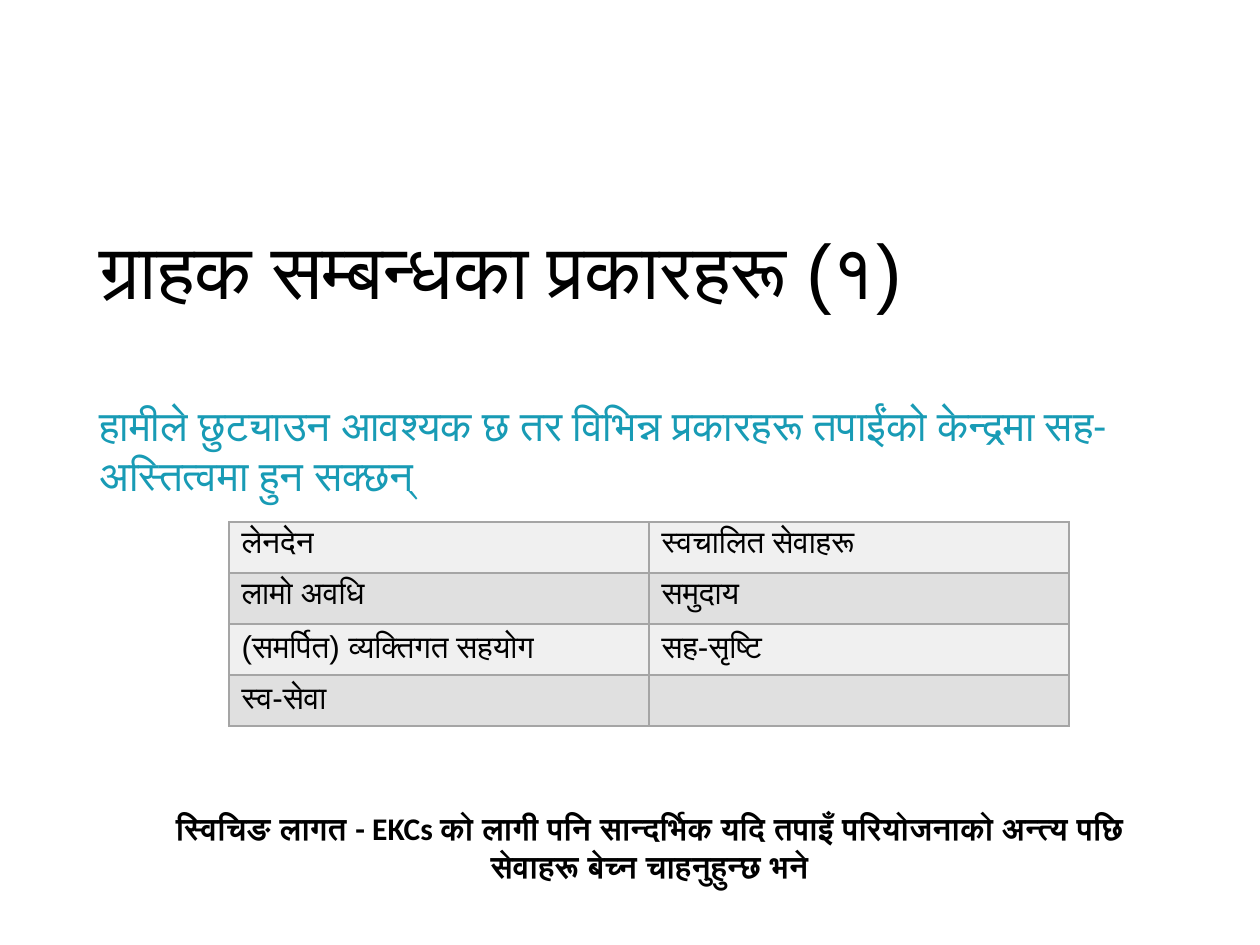
from lxml import etree
from pptx import Presentation
from pptx import util as u
from pptx.dml.color import RGBColor
from pptx.enum import text
from pptx.oxml import ns

PX = u.Inches(1) // 126
BLACK = RGBColor(0, 0, 0)
TEAL = RGBColor(0x18, 0x9B, 0xB5)
LIGHT = RGBColor(0xF0, 0xF0, 0xF0)
DARK = RGBColor(0xE0, 0xE0, 0xE0)
EDGE = RGBColor(0xA5, 0xA5, 0xA5)
LEFT = text.PP_ALIGN.LEFT
CENTER = text.PP_ALIGN.CENTER


def write(frame, words, size, face, color=BLACK, align=LEFT, bold=False):
    frame.word_wrap = True
    para = frame.paragraphs[0]
    para.text = words
    para.alignment = align
    font = para.font
    font.size = u.Pt(size)
    font.name = face
    font.bold = bold
    font.color.rgb = color
    return para


def edge(cell):
    props = cell._tc.get_or_add_tcPr()
    for spot, side in enumerate(("lnL", "lnR", "lnT", "lnB")):
        line = etree.Element(ns.qn("a:" + side), w=str(u.Pt(1)))
        fill = etree.SubElement(line, ns.qn("a:solidFill"))
        etree.SubElement(fill, ns.qn("a:srgbClr"), val=str(EDGE))
        props.insert(spot, line)


deck = Presentation()
deck.slide_width = 1260 * PX
deck.slide_height = 945 * PX
slide = deck.slides.add_slide(deck.slide_layouts[5])

title = slide.shapes.title
title.left, title.top, title.width, title.height = [n * PX for n in (87, 220, 1086, 110)]
frame = title.text_frame
frame.auto_size = text.MSO_AUTO_SIZE.NONE
frame.vertical_anchor = text.MSO_ANCHOR.MIDDLE
head = write(frame, "ग्राहक सम्बन्धका प्रकारहरू (१)", 44, "Arial")
head.line_spacing = 0.9

lead = slide.shapes.add_textbox(87 * PX, 393 * PX, 1086 * PX, 115 * PX)
write(lead.text_frame,
      "हामीले छुट्याउन आवश्यक छ तर विभिन्न प्रकारहरू तपाईंको केन्द्रमा सह-अस्तित्वमा हुन सक्छन्",
      24, "Calibri", TEAL)

kinds = [
    ("लेनदेन", "स्वचालित सेवाहरू"),
    ("लामो अवधि", "समुदाय"),
    ("(समर्पित) व्यक्तिगत सहयोग", "सह-सृष्टि"),
    ("स्व-सेवा", ""),
]
grid = slide.shapes.add_table(4, 2, 229 * PX, 522 * PX, 840 * PX, 204 * PX).table
grid.first_row = False
grid.horz_banding = False
for r, row in enumerate(kinds):
    for c, words in enumerate(row):
        cell = grid.cell(r, c)
        cell.fill.solid()
        cell.fill.fore_color.rgb = DARK if r % 2 else LIGHT
        edge(cell)
        write(cell.text_frame, words, 18, "Arial")

note = slide.shapes.add_textbox(152 * PX, 803 * PX, 995 * PX, 89 * PX)
write(note.text_frame,
      "स्विचिङ लागत - EKCs को लागी पनि सान्दर्भिक यदि तपाइँ परियोजनाको अन्त्य पछि सेवाहरू बेच्न चाहनुहुन्छ भने",
      18, "Calibri", align=CENTER, bold=True)

deck.save("out.pptx")
